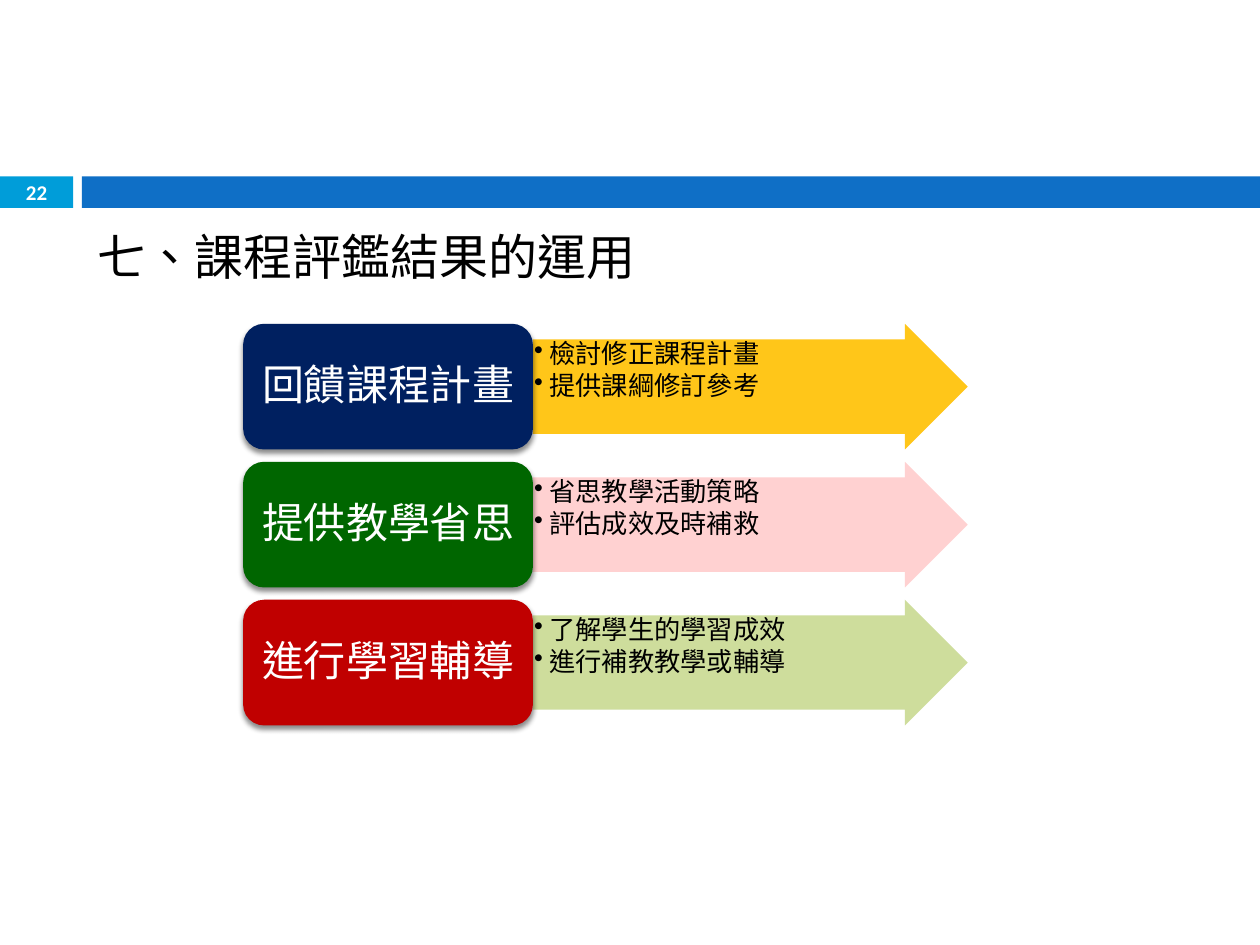
from lxml.etree import SubElement
from pptx import Presentation
from pptx.dml.color import RGBColor
from pptx.enum.shapes import MSO_SHAPE as Preset
from pptx.enum.text import MSO_ANCHOR as Anchor, PP_ALIGN as Align
from pptx.oxml.ns import qn
from pptx.util import Emu, Inches, Pt

SKY = RGBColor(0x00, 0x9D, 0xD9)
BLUE = RGBColor(0x0F, 0x6F, 0xC6)
NAVY = RGBColor(0x00, 0x20, 0x60)
GREEN = RGBColor(0x00, 0x66, 0x00)
RED = RGBColor(0xC0, 0x00, 0x00)
GOLD = RGBColor(0xFF, 0xC0, 0x00)
PINK = RGBColor(0xFF, 0xCC, 0xCC)
LIME = RGBColor(0xC9, 0xDA, 0x92)
BLACK = RGBColor(0x00, 0x00, 0x00)
WHITE = RGBColor(0xFF, 0xFF, 0xFF)

LATIN, HAN = "Calibri", "Noto Sans CJK TC"
WIDTH, HEIGHT = Inches(10), Inches(7.5)

# Row grid, as percentages of the slide's width (x) and height (y)
ROW_TOP, ROW_STEP, ROW_HEIGHT = 34.27, 14.6, 13.3
LABEL_LEFT, LABEL_WIDTH, ARROW_WIDTH = 19.3, 23, 34.5

ROWS = [
    ("回饋課程計畫", NAVY, GOLD, ["檢討修正課程計畫", "提供課綱修訂參考"]),
    ("提供教學省思", GREEN, PINK, ["省思教學活動策略", "評估成效及時補救"]),
    ("進行學習輔導", RED, LIME, ["了解學生的學習成效", "進行補教教學或輔導"]),
]


class SlideBuilder:
    """Holds the page and its style; places are percentages of the slide."""

    def __init__(self, page):
        self.page = page

    def place(self, left, top, width, height):
        return (Emu(int(WIDTH * left / 100)), Emu(int(HEIGHT * top / 100)),
                Emu(int(WIDTH * width / 100)), Emu(int(HEIGHT * height / 100)))

    def add_span(self, para, text, size, color, bold=False, font=LATIN):
        span = para.add_run()
        span.text = text
        span.font.name, span.font.size = font, Pt(size)
        span.font.bold, span.font.color.rgb = bold, color
        span._r.get_or_add_rPr().set("lang", "zh-TW")
        return span

    def frame(self, box, inset, anchor):
        frame = box.text_frame
        frame.word_wrap, frame.vertical_anchor = True, anchor
        frame.margin_left = frame.margin_right = Inches(inset)
        frame.margin_top = frame.margin_bottom = Inches(min(inset, 0.05))
        return frame

    def shape(self, preset, place, color):
        box = self.page.shapes.add_shape(preset, *self.place(*place))
        box.shadow.inherit = False
        box.fill.solid()
        box.fill.fore_color.rgb = color
        box.line.fill.background()
        return box

    def title(self, place, text):
        box = self.page.shapes.title
        box.left, box.top, box.width, box.height = self.place(*place)
        para = self.frame(box, 0.1, Anchor.TOP).paragraphs[0]
        para.alignment, para.space_before = Align.LEFT, Pt(7)
        span = self.add_span(para, text, 28, BLACK, font=HAN)
        SubElement(span._r.get_or_add_rPr(), qn("a:ea"), typeface=HAN)

    def page_number(self, place, text):
        box = self.page.shapes.add_textbox(*self.place(*place))
        para = self.frame(box, 0.05, Anchor.MIDDLE).paragraphs[0]
        para.alignment = Align.CENTER
        self.add_span(para, text, 12, WHITE, bold=True)

    def arrow(self, place, color, items):
        box = self.shape(Preset.RIGHT_ARROW, place, color)
        box.adjustments[0], box.adjustments[1] = 0.75, 0.5
        fill = box._element.spPr.find(qn("a:solidFill"))
        SubElement(fill[0], qn("a:alpha"), val="90000")
        frame = self.frame(box, 0.01, Anchor.TOP)
        for index, item in enumerate(items):
            para = frame.add_paragraph() if index else frame.paragraphs[0]
            para.alignment, para.line_spacing = Align.LEFT, 0.9
            para.space_after = Pt(2)
            props = para._p.get_or_add_pPr()
            props.set("marL", str(Inches(0.12)))
            props.set("indent", str(-Inches(0.12)))
            SubElement(props, qn("a:buChar"), char="•")
            self.add_span(para, item, 15, BLACK)

    def label(self, place, color, text):
        box = self.shape(Preset.ROUNDED_RECTANGLE, place, color)
        effects = box._element.spPr.find(qn("a:effectLst"))
        shadow = SubElement(effects, qn("a:outerShdw"), blurRad=str(Pt(3)),
                            dist=str(Pt(2.4)), dir="5400000", rotWithShape="0")
        tint = SubElement(shadow, qn("a:srgbClr"), val=str(BLACK))
        SubElement(tint, qn("a:alpha"), val="45000")
        para = self.frame(box, 0.1, Anchor.MIDDLE).paragraphs[0]
        para.alignment, para.line_spacing = Align.CENTER, 0.9
        self.add_span(para, text, 24, WHITE)


def main():
    deck = Presentation()
    deck.slide_width, deck.slide_height = WIDTH, HEIGHT
    builder = SlideBuilder(deck.slides.add_slide(deck.slide_layouts[5]))

    # Header band, title and page number
    builder.shape(Preset.RECTANGLE, (0, 18.67, 5.8, 3.33), SKY)
    builder.shape(Preset.RECTANGLE, (6.5, 18.67, 93.5, 3.33), BLUE)
    builder.title((6.7, 23.33, 89.2, 65.6), "七、課程評鑑結果的運用")
    builder.page_number((0, 18.53, 5.8, 3.6), "22")

    # One label and one arrow per row
    for index, (name, dark, light, items) in enumerate(ROWS):
        top = ROW_TOP + index * ROW_STEP
        arrow_left = LABEL_LEFT + LABEL_WIDTH
        builder.arrow((arrow_left, top, ARROW_WIDTH, ROW_HEIGHT), light, items)
        builder.label((LABEL_LEFT, top, LABEL_WIDTH, ROW_HEIGHT), dark, name)

    deck.save("out.pptx")


if __name__ == "__main__":
    main()
